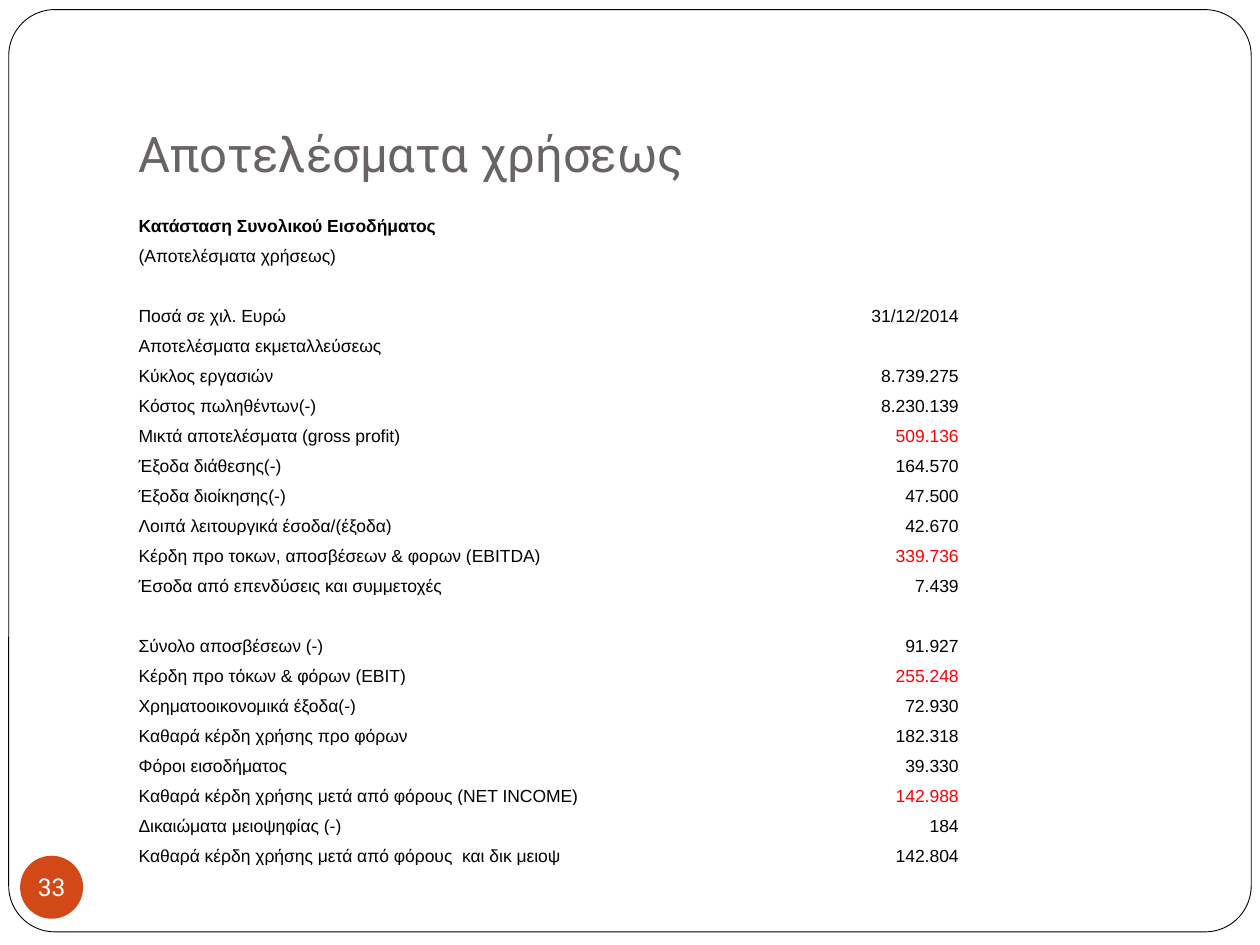
from pptx import Presentation
from pptx import util as u
from pptx.dml.color import RGBColor
from pptx.enum import shapes, text

BLACK, WHITE, RED, GREY, RUST = "000000", "FFFFFF", "FF0000", "696464", "D34817"

# Label, amount, amount colour
ROWS = [
    ("Κατάσταση Συνολικού Εισοδήματος", "", BLACK),
    ("(Αποτελέσματα χρήσεως)", "", BLACK),
    ("", "", BLACK),
    ("Ποσά σε χιλ. Ευρώ", "31/12/2014", BLACK),
    ("Αποτελέσματα εκμεταλλεύσεως", "", BLACK),
    ("Κύκλος εργασιών", "8.739.275", BLACK),
    ("Κόστος πωληθέντων(-)", "8.230.139", BLACK),
    ("Μικτά αποτελέσματα (gross profit)", "509.136", RED),
    ("Έξοδα διάθεσης(-)", "164.570", BLACK),
    ("Έξοδα διοίκησης(-)", "47.500", BLACK),
    ("Λοιπά λειτουργικά έσοδα/(έξοδα)", "42.670", BLACK),
    ("Κέρδη προ τοκων, αποσβέσεων & φορων (EBITDA)", "339.736", RED),
    ("Έσοδα από επενδύσεις και συμμετοχές", "7.439", BLACK),
    ("", "", BLACK),
    ("Σύνολο αποσβέσεων (-)", "91.927", BLACK),
    ("Κέρδη προ τόκων & φόρων (EBΙT)", "255.248", RED),
    ("Χρηματοοικονομικά έξοδα(-)", "72.930", BLACK),
    ("Καθαρά κέρδη χρήσης προ φόρων", "182.318", BLACK),
    ("Φόροι εισοδήματος", "39.330", BLACK),
    ("Καθαρά κέρδη χρήσης μετά από φόρους (NET INCOME)", "142.988", RED),
    ("Δικαιώματα μειοψηφίας (-)", "184", BLACK),
    ("Καθαρά κέρδη χρήσης μετά από φόρους  και δικ μειοψ", "142.804", BLACK),
]


def rgb(code):
    return RGBColor.from_string(code)


def pts(*nums):
    return [u.Pt(n) for n in nums]


class Page:
    head, body = "Roboto", "Arial"

    def __init__(self, deck):
        self.slide = deck.slides.add_slide(deck.slide_layouts[5])

    def label(self, par, words, size, face, color, align, bold=False):
        par.text = words
        par.alignment = align
        font = par.font
        font.size, font.name, font.bold = u.Pt(size), face, bold
        font.color.rgb = rgb(color)

    def inset(self, box, left, top, right, bottom):
        box.margin_left, box.margin_top, box.margin_right, box.margin_bottom = pts(
            left, top, right, bottom)

    def shape(self, kind, place, fill, line=None):
        item = self.slide.shapes.add_shape(kind, *pts(*place))
        item.shadow.inherit = False
        item.fill.solid()
        item.fill.fore_color.rgb = rgb(fill)
        if line:
            item.line.color.rgb = rgb(line)
            item.line.width = u.Pt(0.5)
        else:
            item.line.fill.background()
        return item

    def frame(self, place):
        item = self.shape(shapes.MSO_SHAPE.ROUNDED_RECTANGLE, place, WHITE, BLACK)
        item.adjustments[0] = 0.05
        # Keep the frame behind the title
        self.slide.shapes.title.element.addprevious(item.element)

    def title(self, words, place):
        item = self.slide.shapes.title
        item.left, item.top, item.width, item.height = pts(*place)
        box = item.text_frame
        box.word_wrap = True
        box.auto_size = text.MSO_AUTO_SIZE.NONE
        box.vertical_anchor = text.MSO_ANCHOR.BOTTOM
        self.inset(box, 7.2, 3.6, 7.2, 7.2)
        self.label(box.paragraphs[0], words, 28, self.head, GREY, text.PP_ALIGN.LEFT)

    def cell(self, cell, words, color, align, bold=False):
        cell.fill.background()
        cell.vertical_anchor = text.MSO_ANCHOR.BOTTOM
        self.inset(cell, 0.72, 0.72, 0.72, 0)
        par = cell.text_frame.paragraphs[0]
        self.label(par, words, 10, self.body, color, align, bold)
        if not words:  # an empty cell must not stretch its row
            par._p.get_or_add_endParaRPr().set("sz", "1000")

    def table(self, rows, left, top, widths, step):
        grid = self.slide.shapes.add_table(
            len(rows), len(widths),
            *pts(left, top, sum(widths), step * len(rows))).table
        grid.first_row = grid.horz_banding = False
        for col, width in zip(grid.columns, widths):
            col.width = u.Pt(width)
        for i, (name, amount, color) in enumerate(rows):
            grid.rows[i].height = u.Pt(step)
            self.cell(grid.cell(i, 0), name, BLACK, text.PP_ALIGN.LEFT, i == 0)
            self.cell(grid.cell(i, 1), amount, color, text.PP_ALIGN.RIGHT)

    def badge(self, words, place):
        box = self.shape(shapes.MSO_SHAPE.OVAL, place, RUST).text_frame
        box.word_wrap = False
        box.vertical_anchor = text.MSO_ANCHOR.MIDDLE
        self.inset(box, 0, 0, 0, 0)
        self.label(box.paragraphs[0], words, 14, self.head, WHITE, text.PP_ALIGN.CENTER)


def main():
    deck = Presentation()
    deck.slide_width, deck.slide_height = pts(720, 540)
    page = Page(deck)

    # Frame and title
    page.frame((5, 5.5, 710, 527))
    page.title("Αποτελέσματα χρήσεως", (72, 21.6, 612, 90))

    # Income statement
    page.table(ROWS, 78.5, 118.1, (372, 98), 17.14)

    # Page number
    page.badge("33", (11.5, 489, 36, 36))

    deck.save("out.pptx")


if __name__ == "__main__":
    main()
